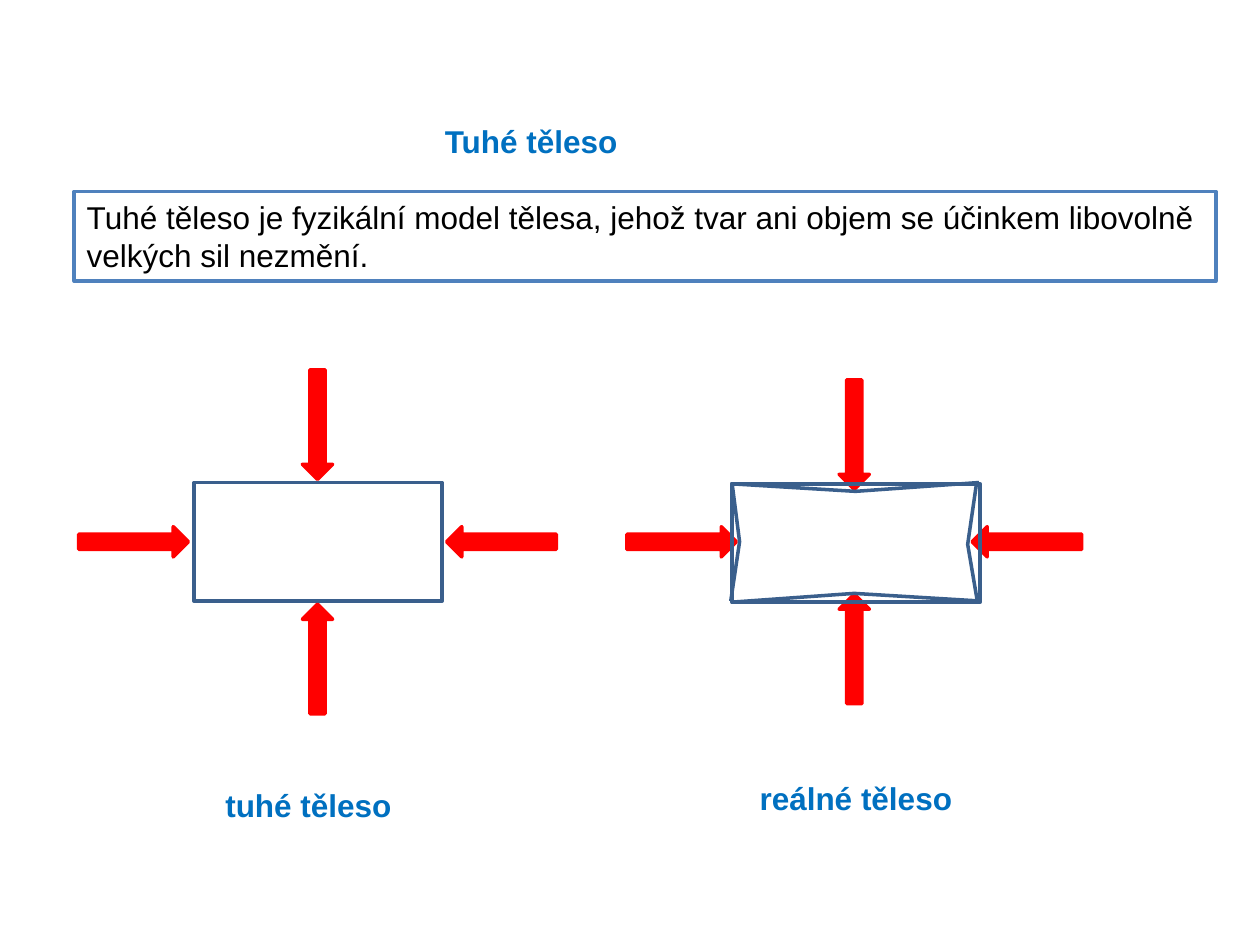
import pptx
import pptx.dml.color
import pptx.enum.shapes
import pptx.enum.text
import pptx.util
from dataclasses import dataclass
from pptx.util import Inches


@dataclass(frozen=True)
class Theme:
    font: str = "Arial"
    size: int = 18
    heading: str = "0070C0"
    text: str = "000000"
    frame: str = "4F81BD"
    body: str = "3A5F8C"
    force: str = "FF0000"
    frame_width: float = 2.25
    outline_width: float = 2
    hairline: float = 0.25


THEME = Theme()
BODY_WIDTH, BODY_HEIGHT = 1.97, 0.94
ARROW_WIDTH, ARROW_LENGTH = 0.24, 0.87


def rgb(value):
    return pptx.dml.color.RGBColor.from_string(value)


def draw_line(shape, color, width):
    shape.line.color.rgb = rgb(color)
    shape.line.width = pptx.util.Pt(width)


def write(box, text, color, bold=False):
    frame = box.text_frame
    frame.word_wrap = True
    frame.auto_size = pptx.enum.text.MSO_AUTO_SIZE.SHAPE_TO_FIT_TEXT
    frame.vertical_anchor = pptx.enum.text.MSO_ANCHOR.TOP
    frame.text = text
    paragraph = frame.paragraphs[0]
    paragraph.alignment = pptx.enum.text.PP_ALIGN.LEFT
    font = paragraph.runs[0].font
    font.name, font.size, font.bold = THEME.font, pptx.util.Pt(THEME.size), bold
    font.color.rgb = rgb(color)


def add_title(slide, text, left, top, width, height):
    title = slide.shapes.title
    title.left, title.top = Inches(left), Inches(top)
    title.width, title.height = Inches(width), Inches(height)
    write(title, text, THEME.heading, bold=True)


def add_text(slide, text, left, top, width, height, color, bold=False):
    box = slide.shapes.add_textbox(
        Inches(left), Inches(top), Inches(width), Inches(height))
    write(box, text, color, bold)
    return box


def add_body(shapes, left, top, line_width):
    body = shapes.add_shape(
        pptx.enum.shapes.MSO_SHAPE.RECTANGLE, Inches(left), Inches(top),
        Inches(BODY_WIDTH), Inches(BODY_HEIGHT))
    body.shadow.inherit = False
    body.fill.background()
    draw_line(body, THEME.body, line_width)


def add_forces(shapes, center_x, center_y, reach_x, reach_y):
    """Four arrows around a centre, all pointing inwards."""
    for dx, dy, rotation in ((0, -reach_y, 0), (0, reach_y, 180),
                             (reach_x, 0, 90), (-reach_x, 0, 270)):
        force = shapes.add_shape(
            pptx.enum.shapes.MSO_SHAPE.DOWN_ARROW,
            Inches(center_x + dx - ARROW_WIDTH / 2),
            Inches(center_y + dy - ARROW_LENGTH / 2),
            Inches(ARROW_WIDTH), Inches(ARROW_LENGTH))
        force.rotation = rotation
        force.shadow.inherit = False
        force.fill.solid()
        force.fill.fore_color.rgb = rgb(THEME.force)
        draw_line(force, THEME.force, THEME.outline_width)


def add_dent(shapes, points):
    """An open bent line along one side of the deformed body."""
    start, *rest = [(Inches(x), Inches(y)) for x, y in points]
    builder = shapes.build_freeform(*start)
    builder.add_line_segments(rest, close=False)
    dent = builder.convert_to_shape()
    dent.shadow.inherit = False
    dent.fill.background()
    draw_line(dent, THEME.body, THEME.outline_width)


def add_rigid_body(slide):
    add_body(slide.shapes, 1.54, 3.83, THEME.outline_width)
    forces = slide.shapes.add_group_shape()
    add_forces(forces.shapes, 2.52, 4.3, 1.46, 0.93)
    add_text(slide, "tuhé těleso", 1.69, 6.19, 1.73, 0.4, THEME.heading, bold=True)


def add_real_body(slide):
    add_text(slide, "reálné těleso", 5.93, 6.13, 2.2, 0.4, THEME.heading, bold=True)
    deformed = slide.shapes.add_group_shape()
    add_forces(deformed.shapes, 6.78, 4.3, 1.37, 0.85)
    add_body(deformed.shapes, 5.8, 3.84, THEME.hairline)
    for dent in (
        ((5.8, 3.84), (6.79, 3.9), (7.77, 3.83)),
        ((7.77, 4.77), (6.78, 4.71), (5.8, 4.78)),
        ((7.75, 3.84), (7.68, 4.32), (7.76, 4.79)),
        ((5.81, 3.83), (5.87, 4.3), (5.8, 4.77)),
    ):
        add_dent(deformed.shapes, dent)
    add_body(slide.shapes, 5.81, 3.84, THEME.outline_width)


def main():
    deck = pptx.Presentation()
    deck.slide_width, deck.slide_height = Inches(10), Inches(7.5)
    slide = deck.slides.add_slide(deck.slide_layouts.get_by_name("Title Only"))
    add_title(slide, "Tuhé těleso", 3.43, 0.92, 5.67, 0.4)
    definition = add_text(
        slide,
        "Tuhé těleso je fyzikální model tělesa, jehož tvar ani objem "
        "se účinkem libovolně velkých sil nezmění.",
        0.59, 1.52, 9.06, 0.71, THEME.text)
    draw_line(definition, THEME.frame, THEME.frame_width)
    add_rigid_body(slide)
    add_real_body(slide)
    deck.save("out.pptx")


if __name__ == "__main__":
    main()
